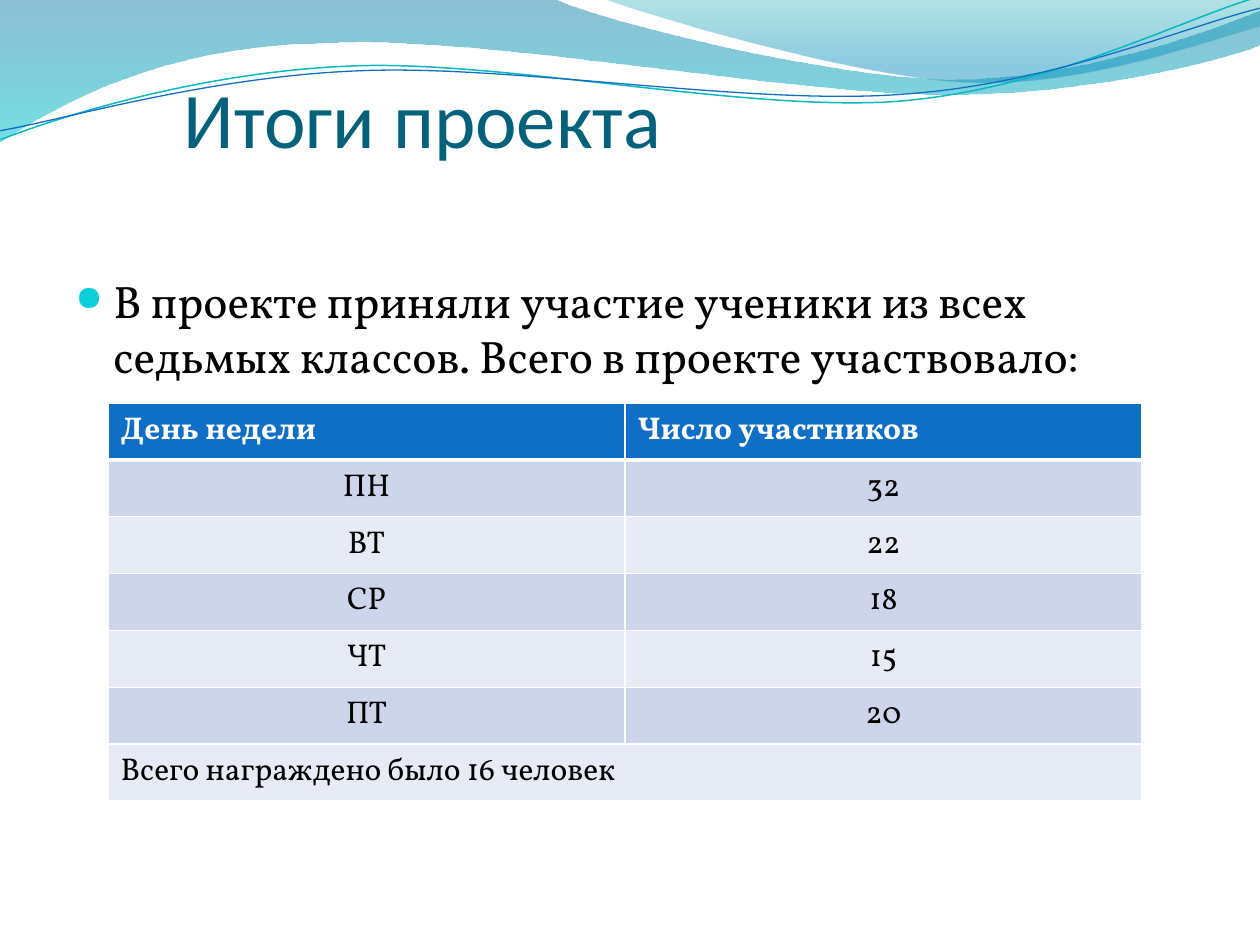
from lxml import etree
from pptx import Presentation
from pptx.dml.color import RGBColor
from pptx.enum.text import MSO_ANCHOR, PP_ALIGN
from pptx.oxml import parse_xml
from pptx.oxml.ns import nsdecls, qn
from pptx.util import Pt

BOTTOM, TOP = MSO_ANCHOR.BOTTOM, MSO_ANCHOR.TOP
LEFT, CENTER = PP_ALIGN.LEFT, PP_ALIGN.CENTER
SCALE = 914400 / 126
STRAND_TILT = 357.3
HEAD_FONT, BODY_FONT = "Calibri", "Vollkorn"
COLORS = {
    "title": "04617B", "text": "000000", "white": "FFFFFF", "bullet": "0BD0D9",
    "header": "0F6FC6", "odd": "CCD5EA", "even": "E7EBF5",
    "teal": "0AB8BF", "blue": "0F6FC6",
}

TITLE = "Итоги проекта"
BODY = "В проекте приняли участие ученики из всех седьмых классов. Всего в проекте участвовало:"
HEADER = ("День недели", "Число участников")
DAYS = [("ПН", "32"), ("ВТ", "22"), ("СР", "18"), ("ЧТ", "15"), ("ПТ", "20")]
TOTAL = ("Всего награждено было 16 человек",)
TABLE_BOX = (108, 403, 1034, 398)

WAVES = [
    ((0, 0), [
        [(554, -1)],
        [(600, 21), (837, 79), (955, 79)],
        [(1074, 79), (1207, 33), (1260, 11)],
        [(1261, 45)],
        [(1238, 55), (1096, 96), (940, 94)],
        [(784, 94), (481, 35), (324, 43)],
        [(162, 45), (58, 105), (-1, 142)],
        [(0, 0)],
    ], [(0, "0074A1", 45), (100, "00C6CF", 55)]),
    ((604, -1), [
        [(641, 14), (859, 78), (969, 82)],
        [(1079, 87), (1211, 40), (1260, 26)],
        [(1260, 0)],
        [(604, -1)],
    ], [(0, "00A1A9", 30), (80, "008BBF", 45)]),
]
STRANDS = [
    ((-2, 110), [
        [(58, 90), (199, 52), (350, 53)],
        [(499, 53), (745, 118), (896, 114)],
        [(1049, 109), (1184, 45), (1260, 27)],
    ], "teal", 0.85),
    ((-2, 101), [
        [(57, 94), (207, 57), (357, 58)],
        [(509, 58), (750, 112), (902, 107)],
        [(1052, 104), (1189, 52), (1262, 38)],
    ], "blue", 0.75),
]


def px(value):
    return round(value * SCALE)


def color(name):
    return RGBColor.from_string(COLORS[name])


def add_outline(shapes, start, segments, closed):
    builder = shapes.build_freeform(px(start[0]), px(start[1]))
    ends = [segment[-1] for segment in segments]
    builder.add_line_segments([(px(x), px(y)) for x, y in ends], close=closed)
    shape = builder.convert_to_shape()
    shape.shadow.inherit = False
    shape.fill.background()
    lines = list(shape._element.iter(qn("a:lnTo")))
    for line, segment in zip(lines, segments):
        if len(segment) == 3:
            curve = etree.Element(qn("a:cubicBezTo"))
            for x, y in segment:
                etree.SubElement(curve, qn("a:pt"), x=str(px(x) - shape.left), y=str(px(y) - shape.top))
            line.getparent().replace(line, curve)
    return shape


def add_wave(shapes, start, segments, stops):
    shape = add_outline(shapes, start, segments, True)
    shape.line.fill.background()
    marks = "".join(
        f'<a:gs pos="{place * 1000}"><a:srgbClr val="{shade}">'
        f'<a:alpha val="{opacity * 1000}"/></a:srgbClr></a:gs>'
        for place, shade, opacity in stops)
    gradient = parse_xml(
        f'<a:gradFill {nsdecls("a")} rotWithShape="1"><a:gsLst>{marks}</a:gsLst>'
        '<a:lin ang="5400000" scaled="0"/></a:gradFill>')
    properties = shape._element.spPr
    properties.replace(properties.find(qn("a:noFill")), gradient)


def add_strand(shapes, start, segments, shade, width):
    shape = add_outline(shapes, start, segments, False)
    shape.rotation = STRAND_TILT
    shape.line.color.rgb = color(shade)
    shape.line.width = Pt(width)


def style(para, font, size, shade, bold=False):
    para.font.name = font
    para.font.size = Pt(size)
    para.font.bold = bold
    para.font.color.rgb = color(shade)


def add_text(page, text, area, anchor):
    box = page.shapes.add_textbox(*map(px, area))
    frame = box.text_frame
    frame.word_wrap = True
    frame.vertical_anchor = anchor
    para = frame.paragraphs[0]
    para.text = text
    return frame, para


def add_bullet(para, indent):
    properties = para._p.get_or_add_pPr()
    properties.set("marL", str(px(indent)))
    properties.set("indent", str(-px(indent)))
    shade = etree.SubElement(properties, qn("a:buClr"))
    etree.SubElement(shade, qn("a:srgbClr"), val=COLORS["bullet"])
    etree.SubElement(properties, qn("a:buSzPct"), val="76000")
    etree.SubElement(properties, qn("a:buChar"), char="●")


def add_borders(cell, bottom):
    properties = cell._tc.get_or_add_tcPr()
    for index, (side, width) in enumerate((("L", 1), ("R", 1), ("T", 1), ("B", bottom))):
        properties.insert(index, parse_xml(
            f'<a:ln{side} {nsdecls("a")} w="{Pt(width)}"><a:solidFill>'
            f'<a:srgbClr val="{COLORS["white"]}"/></a:solidFill></a:ln{side}>'))


def add_results(page):
    rows = [HEADER, *DAYS, TOTAL]
    last = len(rows) - 1
    table = page.shapes.add_table(len(rows), len(HEADER), *map(px, TABLE_BOX)).table
    for column in table.columns:
        column.width = px(TABLE_BOX[2] / len(HEADER))
    table.cell(last, 0).merge(table.cell(last, 1))
    for index, values in enumerate(rows):
        table.rows[index].height = px(TABLE_BOX[3] / len(rows))
        is_header = index == 0
        fill = "header" if is_header else "odd" if index % 2 else "even"
        for cell, value in zip(table.rows[index].cells, values):
            cell.fill.solid()
            cell.fill.fore_color.rgb = color(fill)
            add_borders(cell, 3 if is_header else 1)
            para = cell.text_frame.paragraphs[0]
            para.text = value
            para.alignment = CENTER if 0 < index < last else LEFT
            style(para, BODY_FONT, 18, "white" if is_header else "text", is_header)


def main():
    deck = Presentation()
    deck.slide_width, deck.slide_height = px(1260), px(945)
    page = deck.slides.add_slide(deck.slide_layouts[6])
    for wave in WAVES:
        add_wave(page.shapes, *wave)
    strands = page.shapes.add_group_shape()
    for strand in STRANDS:
        add_strand(strands.shapes, *strand)
    frame, title = add_text(page, TITLE, (184, 66, 816, 98), BOTTOM)
    frame.margin_left = frame.margin_right = frame.margin_bottom = 0
    style(title, HEAD_FONT, 45, "title")
    frame, body = add_text(page, BODY, (63, 267, 1134, 166), TOP)
    body.space_before = Pt(5)
    add_bullet(body, 38)
    style(body, BODY_FONT, 26, "text")
    add_results(page)
    deck.save("out.pptx")


if __name__ == "__main__":
    main()
